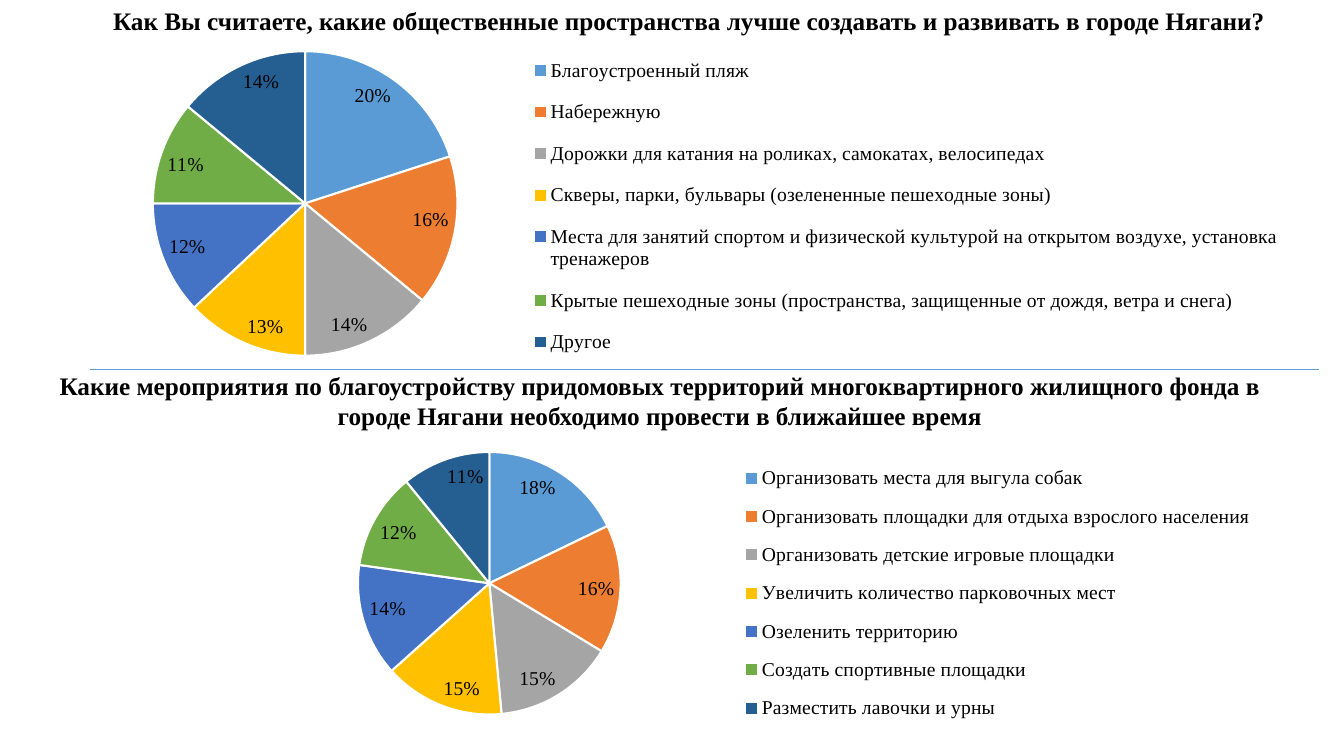
"""Build a slide with two survey pie charts."""
import dataclasses

import pptx
import pptx.chart.data
import pptx.dml.color
import pptx.enum.chart
import pptx.enum.shapes
import pptx.enum.text
import pptx.oxml
import pptx.oxml.ns
import pptx.util

Inches = pptx.util.Inches
Pt = pptx.util.Pt


@dataclasses.dataclass(frozen=True)
class Theme:
    """Fonts, type sizes and colours of the slide."""
    font: str = "Times New Roman"
    chart_font: str = "Calibri"
    heading_size: int = 18
    label_size: int = 14
    chart_size: int = 10
    text: str = "000000"
    gap: str = "FFFFFF"
    divider: str = "5B9BD5"
    slices: tuple = ("5B9BD5", "ED7D31", "A5A5A5", "FFC000", "4472C4", "70AD47", "255E91")


THEME = Theme()

SPACES_QUESTION = ("Как Вы считаете, какие общественные пространства лучше создавать "
                   "и развивать в городе Нягани?")
SPACES = {
    "Благоустроенный пляж": 20,
    "Набережную": 16,
    "Дорожки для катания на роликах, самокатах, велосипедах": 14,
    "Скверы, парки, бульвары (озелененные пешеходные зоны)": 13,
    "Места для занятий спортом и физической культурой на открытом воздухе, "
    "установка тренажеров": 12,
    "Крытые пешеходные зоны (пространства, защищенные от дождя, ветра и снега)": 11,
    "Другое": 14,
}
YARDS_QUESTION = ("Какие мероприятия по благоустройству придомовых территорий "
                  "многоквартирного жилищного фонда в городе Нягани необходимо "
                  "провести в ближайшее время")
YARDS = {
    "Организовать места для выгула собак": 18,
    "Организовать площадки для отдыха взрослого населения": 16,
    "Организовать детские игровые площадки": 15,
    "Увеличить количество парковочных мест": 15,
    "Озеленить территорию": 14,
    "Создать спортивные площадки": 12,
    "Разместить лавочки и урны": 11,
}


def rgb(code):
    """Return the colour for a hex code."""
    return pptx.dml.color.RGBColor.from_string(code)


def style_font(font, size, name=THEME.font, bold=False):
    """Apply the theme's text colour with a size and typeface."""
    font.size = Pt(size)
    font.name = name
    font.bold = bold
    font.color.rgb = rgb(THEME.text)


def write_heading(heading, question, left, top, width, height):
    """Place a heading and write its question centred and bold."""
    heading.left, heading.top = Inches(left), Inches(top)
    heading.width, heading.height = Inches(width), Inches(height)
    frame = heading.text_frame
    frame.word_wrap = True
    frame.auto_size = pptx.enum.text.MSO_AUTO_SIZE.SHAPE_TO_FIT_TEXT
    frame.vertical_anchor = pptx.enum.text.MSO_ANCHOR.TOP
    paragraph = frame.paragraphs[0]
    paragraph.alignment = pptx.enum.text.PP_ALIGN.CENTER
    run = paragraph.add_run()
    run.text = question
    style_font(run.font, THEME.heading_size, bold=True)


def layout_xml(box, inner=False):
    """Return a manual chart layout for fractions x, y, w and h."""
    target = '<c:layoutTarget val="inner"/>' if inner else ""
    modes = '<c:xMode val="edge"/><c:yMode val="edge"/>'
    sizes = "".join(f'<c:{side} val="{value}"/>' for side, value in zip("xywh", box))
    return pptx.oxml.parse_xml(
        f'<c:layout {pptx.oxml.ns.nsdecls("c")}><c:manualLayout>'
        f"{target}{modes}{sizes}</c:manualLayout></c:layout>")


def set_layouts(chart, plot_box, legend_box):
    """Fix the places of the pie and its legend inside the chart."""
    chart_element = chart.element.find(pptx.oxml.ns.qn("c:chart"))
    plot_area = chart_element.find(pptx.oxml.ns.qn("c:plotArea"))
    for automatic in plot_area.findall(pptx.oxml.ns.qn("c:layout")):
        plot_area.remove(automatic)
    plot_area.insert(0, layout_xml(plot_box, inner=True))
    legend = chart_element.find(pptx.oxml.ns.qn("c:legend"))
    for automatic in legend.findall(pptx.oxml.ns.qn("c:layout")):
        legend.remove(automatic)
    legend.find(pptx.oxml.ns.qn("c:legendPos")).addnext(layout_xml(legend_box))


def add_pie(slide, answers, place, plot_box, legend_box):
    """Add a pie of answer shares with percent labels and a legend."""
    shares = pptx.chart.data.CategoryChartData()
    shares.categories = list(answers)
    shares.add_series("Series 1", list(answers.values()))
    chart = slide.shapes.add_chart(
        pptx.enum.chart.XL_CHART_TYPE.PIE, *map(Inches, place), shares).chart
    chart.has_title = False
    style_font(chart.font, THEME.chart_size, THEME.chart_font)
    chart.has_legend = True
    chart.legend.position = pptx.enum.chart.XL_LEGEND_POSITION.RIGHT
    chart.legend.include_in_layout = False
    style_font(chart.legend.font, THEME.label_size)
    set_layouts(chart, plot_box, legend_box)

    pie = chart.plots[0]
    pie.vary_by_categories = True
    for index, colour in enumerate(THEME.slices):
        answer_slice = pie.series[0].points[index].format
        answer_slice.fill.solid()
        answer_slice.fill.fore_color.rgb = rgb(colour)
        answer_slice.line.color.rgb = rgb(THEME.gap)
        answer_slice.line.width = Pt(1.5)
    labels = pie.series[0].data_labels
    labels.show_value = False
    labels.show_percentage = True
    labels.number_format = "0%"
    labels.number_format_is_linked = False
    labels.position = pptx.enum.chart.XL_LABEL_POSITION.INSIDE_END
    style_font(labels.font, THEME.label_size)


def add_divider(slide, left, right, top):
    """Draw the thin horizontal line between the two questions."""
    divider = slide.shapes.add_connector(
        pptx.enum.shapes.MSO_CONNECTOR.STRAIGHT,
        Inches(left), Inches(top), Inches(right), Inches(top))
    divider.line.color.rgb = rgb(THEME.divider)
    divider.line.width = Pt(0.5)
    divider.element.spPr.append(
        pptx.oxml.parse_xml(f'<a:effectLst {pptx.oxml.ns.nsdecls("a")}/>'))


def main():
    """Build and save the slide."""
    deck = pptx.Presentation()
    deck.slide_width, deck.slide_height = Inches(13.33), Inches(7.5)
    slide = deck.slides.add_slide(deck.slide_layouts.get_by_name("Title Only"))

    add_pie(slide, SPACES, (0.92, 0.09, 12.32, 3.8),
            (0.037, 0.11, 0.268, 0.795), (0.34, 0.08, 0.63, 0.87))
    write_heading(slide.shapes.title, SPACES_QUESTION, 0.42, 0, 12.83, 0.4)
    add_divider(slide, 0.89, 13.08, 3.66)
    yards_heading = slide.shapes.add_textbox(0, 0, 0, 0)
    write_heading(yards_heading, YARDS_QUESTION, 0.13, 3.62, 12.83, 0.71)
    add_pie(slide, YARDS, (0.93, 4.05, 11.8, 3.53),
            (0.072, 0.123, 0.521, 0.738), (0.535, 0.12, 0.45, 0.8))

    deck.save("out.pptx")


if __name__ == "__main__":
    main()
